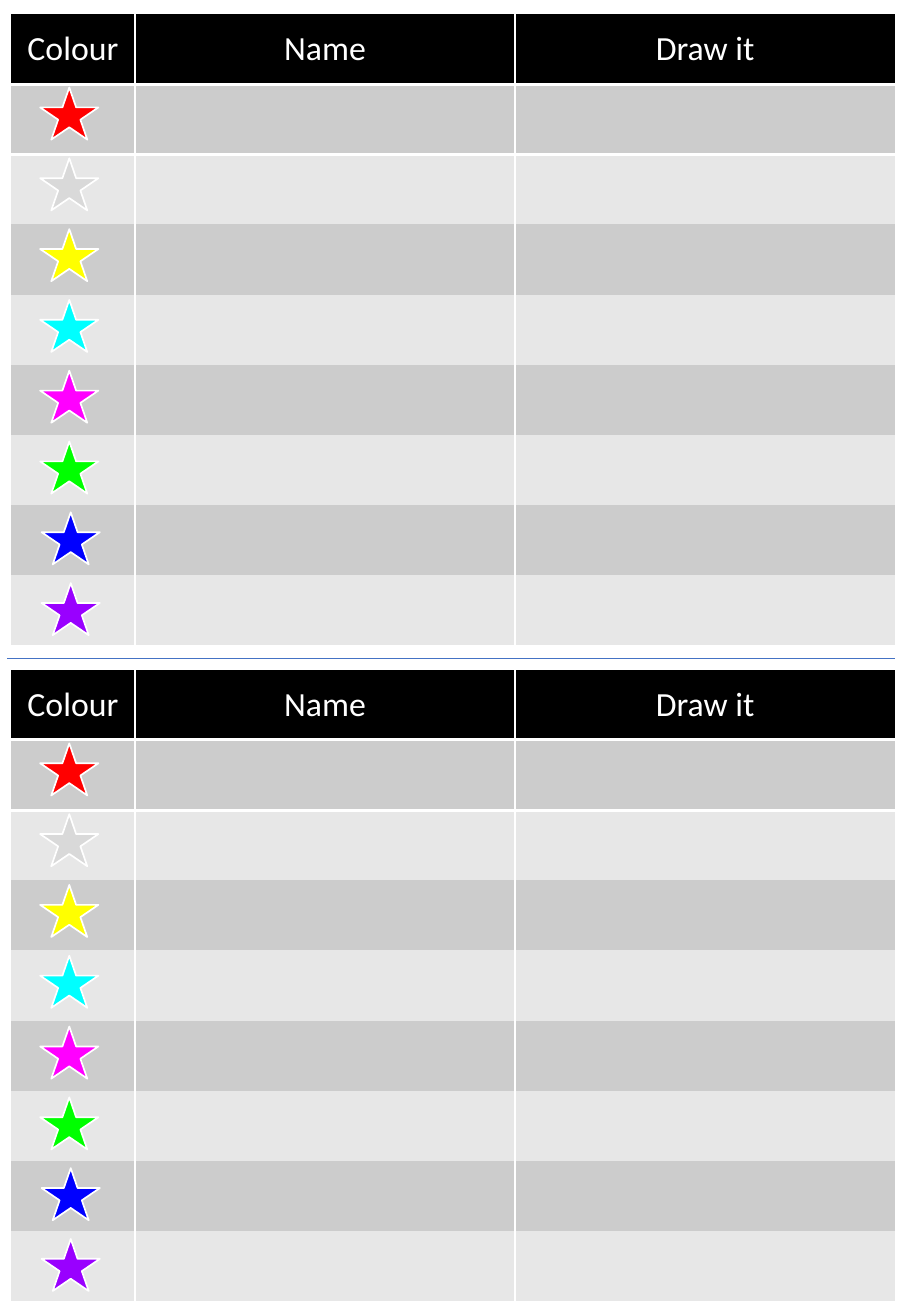
from dataclasses import dataclass

from lxml import etree
from pptx import Presentation
from pptx.dml.color import RGBColor
from pptx.enum.shapes import MSO_CONNECTOR, MSO_SHAPE
from pptx.enum.text import MSO_ANCHOR, PP_ALIGN
from pptx.oxml.ns import qn
from pptx.slide import Slide
from pptx.table import _Cell
from pptx.util import Cm, Pt

STAR_SHAPE = MSO_SHAPE.STAR_5_POINT
STRAIGHT = MSO_CONNECTOR.STRAIGHT
MIDDLE = MSO_ANCHOR.MIDDLE
CENTER = PP_ALIGN.CENTER
NO_GRID_STYLE = "{2D5ABB26-0587-4C30-8999-92F81FD0307C}"


@dataclass(frozen=True)
class Theme:
    font: str = "Calibri"
    header_size: int = 20
    header_fill: str = "000000"
    white: str = "FFFFFF"
    bands: tuple[str, str] = ("CCCCCC", "E7E7E7")
    divider: str = "4472C4"


@dataclass(frozen=True)
class Star:
    color: str
    left: float = 0.84


THEME = Theme()
HEADERS = ("Colour", "Name", "Draw it")
STARS = (
    Star("FF0000"), Star("D9D9D9"), Star("FFFF00"), Star("00FFFF"),
    Star("FF00FF"), Star("00FF00"), Star("0000FF", 0.87), Star("9900FF", 0.87),
)

# Measures in centimetres
COLUMN_WIDTHS = (2.59, 7.95, 7.95)
TABLE_LEFT, TABLE_HEIGHT = 0.23, 13.21
TABLE_TOPS = (0.29, 14.0)
STAR_OFFSET, STAR_PITCH = 1.54, 1.48
STAR_WIDTH, STAR_HEIGHT = 1.22, 1.09
DIVIDER_LEFT, DIVIDER_RIGHT, DIVIDER_TOP = 0.15, 18.72, 13.77


def add_border(cell: _Cell, side: str, points: float) -> None:
    properties = cell._tc.get_or_add_tcPr()
    line = etree.SubElement(properties, qn(f"a:ln{side}"), w=str(Pt(points)))
    fill = etree.SubElement(line, qn("a:solidFill"))
    etree.SubElement(fill, qn("a:srgbClr"), val=THEME.white)


def format_cell(cell: _Cell, row: int, column: int) -> None:
    # Borders come before the fill in the cell properties
    if column > 0:
        add_border(cell, "L", 1)
    if column < len(HEADERS) - 1:
        add_border(cell, "R", 1)
    if row == 1:
        add_border(cell, "T", 2)
    if row == 0:
        add_border(cell, "B", 2)
    color = THEME.bands[(row - 1) % 2] if row else THEME.header_fill
    cell.fill.solid()
    cell.fill.fore_color.rgb = RGBColor.from_string(color)


def write_header(cell: _Cell, text: str) -> None:
    cell.text = text
    cell.vertical_anchor = MIDDLE
    para = cell.text_frame.paragraphs[0]
    para.alignment = CENTER
    para.font.name = THEME.font
    para.font.size = Pt(THEME.header_size)
    para.font.color.rgb = RGBColor.from_string(THEME.white)


def add_colour_table(page: Slide, top: float) -> None:
    row_count = len(STARS) + 1
    frame = page.shapes.add_table(
        row_count, len(HEADERS), Cm(TABLE_LEFT), Cm(top),
        Cm(sum(COLUMN_WIDTHS)), Cm(TABLE_HEIGHT))
    table = frame.table
    table.horz_banding = False
    for style in table._tbl.iter(qn("a:tableStyleId")):
        style.text = NO_GRID_STYLE
    for column, width in zip(table.columns, COLUMN_WIDTHS):
        column.width = Cm(width)
    for row in range(row_count):
        for column in range(len(HEADERS)):
            format_cell(table.cell(row, column), row, column)
    for column, text in enumerate(HEADERS):
        write_header(table.cell(0, column), text)


def add_star(page: Slide, star: Star, top: float) -> None:
    shape = page.shapes.add_shape(
        STAR_SHAPE, Cm(star.left), Cm(top), Cm(STAR_WIDTH), Cm(STAR_HEIGHT))
    shape.shadow.inherit = False
    shape.fill.solid()
    shape.fill.fore_color.rgb = RGBColor.from_string(star.color)
    shape.line.color.rgb = RGBColor.from_string(THEME.white)
    shape.line.width = Pt(1)


def add_divider(page: Slide) -> None:
    line = page.shapes.add_connector(
        STRAIGHT, Cm(DIVIDER_LEFT), Cm(DIVIDER_TOP),
        Cm(DIVIDER_RIGHT), Cm(DIVIDER_TOP))
    line.line.color.rgb = RGBColor.from_string(THEME.divider)
    line.line.width = Pt(0.5)
    etree.SubElement(line._element.spPr, qn("a:effectLst"))


def main() -> None:
    deck = Presentation()
    deck.slide_width, deck.slide_height = Cm(19.05), Cm(27.51)
    page = deck.slides.add_slide(deck.slide_layouts[6])

    # Two equal worksheets, one above the other
    for table_top in TABLE_TOPS:
        add_colour_table(page, table_top)
        for index, star in enumerate(STARS):
            add_star(page, star, table_top + STAR_OFFSET + index * STAR_PITCH)

    # Cutting line between the worksheets
    add_divider(page)
    deck.save("out.pptx")


if __name__ == "__main__":
    main()
